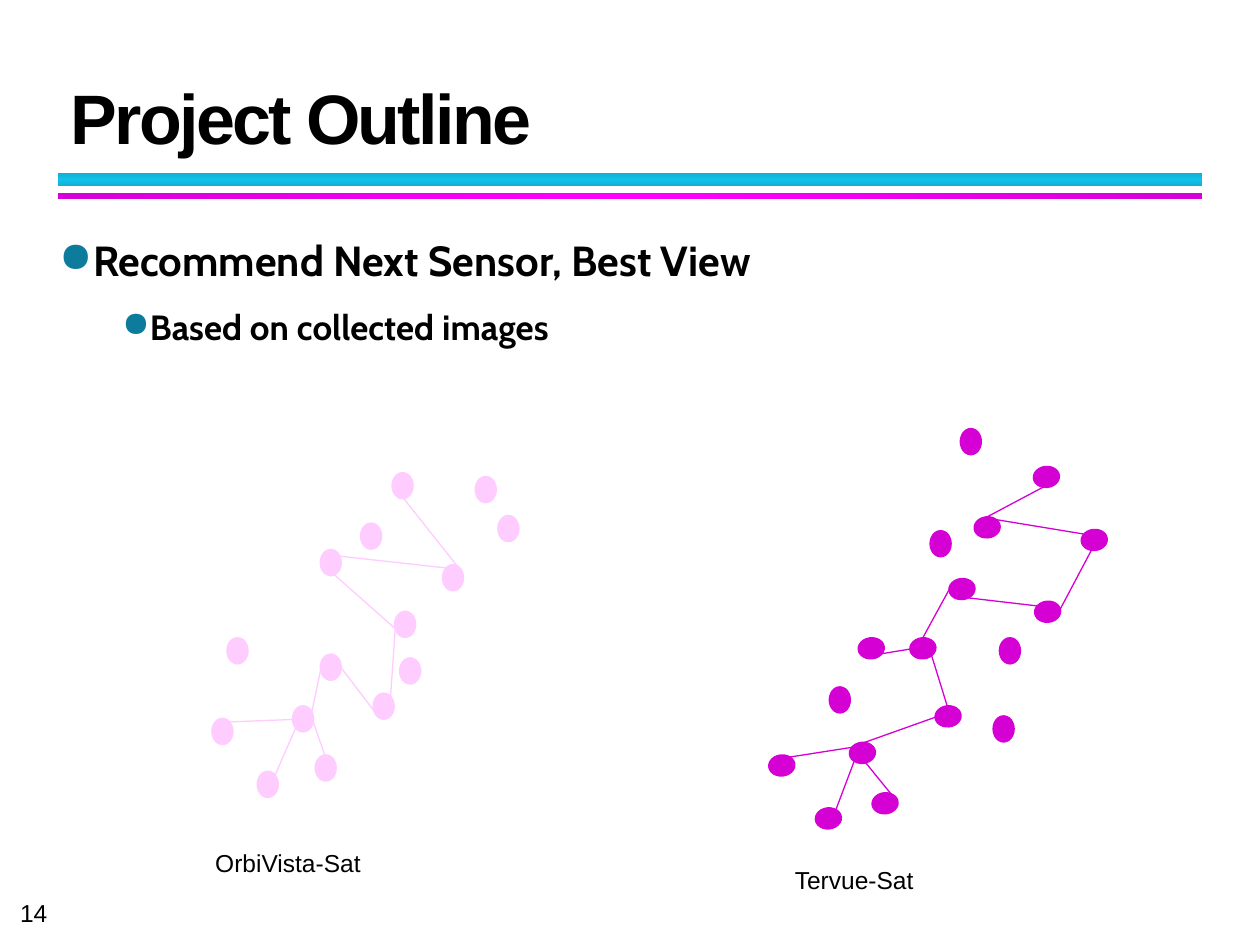
from copy import deepcopy

from lxml import etree
from pptx import Presentation, util as u
from pptx.dml.color import RGBColor
from pptx.enum import shapes, text
from pptx.oxml.ns import qn

COLORS = {
    "text": "000000", "bullet": "0C7B9C",
    "pale": "FFCCFF", "strong": "D400D4",
    "teal": "10AFD2", "cyan": "12C2E9",
    "plum": "D800D8", "magenta": "FF00FF",
}
COLS, ROWS = 100, 75
NODE_W, NODE_H = 1.5, 1.9

PALE_NODES = [
    (25.5, 52), (29.7, 55.1), (31.4, 48.6), (23.3, 56.1), (16.9, 57.1),
    (20.5, 61.3), (25.1, 60), (25.5, 43.7), (35.2, 44.9), (31.2, 37.6),
    (37.8, 37.9), (18.1, 50.7), (31.8, 52.3), (28.7, 41.6), (39.6, 41),
]
PALE_EDGES = [
    (18.1, 57.3, 23.3, 57.1), (21.8, 61.6, 23.5, 57.7), (24.8, 57.1, 25.8, 60),
    (25.5, 52.9, 24.5, 57.7), (29.9, 56.7, 27, 52.9), (31.4, 49.5, 30.9, 56.7),
    (25.5, 44.7, 31.6, 50.1), (36.5, 45.2, 25.7, 44), (31.2, 38.5, 36.5, 45.2),
]
TURNED_NODES = [
    (74.5, 55.9), (68.4, 50.5), (72.5, 50.5), (67.7, 58.8), (61.3, 59.8),
    (65, 64), (69.5, 62.8), (75.6, 45.8), (82.4, 47.6), (77.6, 40.9),
    (86.1, 41.9), (82.3, 36.9),
]
STRONG_NODES = [(76.3, 34.1), (73.9, 42.2), (79.4, 50.7), (65.9, 54.6), (78.9, 56.9)]
STRONG_EDGES = [
    (83.1, 38.5, 78.2, 41.1), (86.1, 42.4, 78.2, 41.1), (83.8, 49, 87.4, 42.2),
    (73.2, 50.7, 75.6, 46.3), (76.4, 47.4, 82.4, 48.1), (72.3, 51.5, 69.9, 51.9),
    (73.9, 51.9, 75.2, 56.1), (68.4, 59, 74.3, 56.9), (67.7, 59.3, 61.3, 60.3),
    (67.8, 60.4, 65.8, 65.7), (67.7, 59.3, 71.2, 63.6),
]


def rgb(name):
    return RGBColor.from_string(COLORS[name])


class Deck:
    def __init__(self):
        self.prs = Presentation()
        self.prs.slide_width, self.prs.slide_height = u.Inches(10), u.Inches(7.5)
        self.s = self.prs.slides.add_slide(self.prs.slide_layouts[5])

    def x(self, cols):
        return round(self.prs.slide_width * cols / COLS)

    def y(self, rows):
        return round(self.prs.slide_height * rows / ROWS)

    def box(self, left, top, width, height):
        return self.x(left), self.y(top), self.x(width), self.y(height)

    def run(self, p, words, size, font="Arial", bold=False):
        r = p.add_run()
        r.text = words
        r.font.size, r.font.name, r.font.bold = u.Pt(size), font, bold
        r.font.color.rgb = rgb("text")
        return r

    def title(self, words, *at):
        sp = self.s.shapes.title
        sp.left, sp.top, sp.width, sp.height = self.box(*at)
        tf = sp.text_frame
        tf.word_wrap, tf.auto_size = True, text.MSO_AUTO_SIZE.NONE
        tf.vertical_anchor = text.MSO_ANCHOR.BOTTOM
        p = tf.paragraphs[0]
        p.alignment, p.line_spacing = text.PP_ALIGN.LEFT, 0.9
        r = self.run(p, words, 40, bold=True)
        r.font._element.set("spc", "-150")

    def textbox(self, *at):
        tf = self.s.shapes.add_textbox(*self.box(*at)).text_frame
        tf.word_wrap = True
        return tf

    def label(self, words, *at):
        self.run(self.textbox(*at).paragraphs[0], words, 14)

    def page_number(self, words, *at):
        tf = self.textbox(*at)
        tf.margin_left = self.x(0.6)
        tf.margin_top = tf.margin_right = tf.margin_bottom = 0
        tf.vertical_anchor = text.MSO_ANCHOR.BOTTOM
        tf.word_wrap = False
        self.run(tf.paragraphs[0], words, 14)

    def bullets(self, items, *at):
        tf = self.textbox(*at)
        for i, (words, level, size, margin, hang) in enumerate(items):
            p = tf.add_paragraph() if i else tf.paragraphs[0]
            p.level, p.line_spacing = level, 1.5
            pPr = p._p.get_or_add_pPr()
            pPr.set("marL", str(self.x(margin)))
            pPr.set("indent", str(-self.x(hang)))
            color = etree.SubElement(pPr, qn("a:buClr"))
            etree.SubElement(color, qn("a:srgbClr"), val=COLORS["bullet"])
            etree.SubElement(pPr, qn("a:buChar"), char="●")
            self.run(p, words, size, "Cabin", True)

    def shape(self, kind, *at):
        sp = self.s.shapes.add_shape(kind, *self.box(*at))
        sp.shadow.inherit = False
        return sp

    def band(self, edge, middle, angle, *at):
        sp = self.shape(shapes.MSO_SHAPE.RECTANGLE, *at)
        sp.line.fill.background()
        sp.fill.gradient()
        sp.fill.gradient_angle = angle
        stop_list = sp._element.spPr.find(qn("a:gradFill")).find(qn("a:gsLst"))
        stop_list.append(deepcopy(stop_list[0]))
        for stop, place, color in zip(sp.fill.gradient_stops, (0, 0.5, 1), (edge, middle, edge)):
            stop.position, stop.color.rgb = place, rgb(color)

    def node(self, left, top, color, turn=0):
        sp = self.shape(shapes.MSO_SHAPE.OVAL, left, top, NODE_W, NODE_H)
        sp.rotation = turn
        sp.fill.solid()
        sp.fill.fore_color.rgb = sp.line.color.rgb = rgb(color)
        sp.line.width = u.Pt(2)

    def edge(self, x1, y1, x2, y2, color):
        line = self.s.shapes.add_connector(
            shapes.MSO_CONNECTOR.STRAIGHT, self.x(x1), self.y(y1), self.x(x2), self.y(y2))
        line.line.color.rgb, line.line.width = rgb(color), u.Pt(0.75)
        etree.SubElement(line._element.spPr, qn("a:effectLst"))

    def network(self, color, nodes, edges, turned=()):
        for node in nodes:
            self.node(*node, color)
        for node in turned:
            self.node(*node, color, 264)
        for edge in edges:
            self.edge(*edge, color)


def main():
    deck = Deck()
    deck.page_number("14", 1, 71.3, 3.4, 2.3)
    deck.band("teal", "cyan", 90, 4.6, 13.7, 90.8, 1.1)
    deck.band("plum", "magenta", 0, 4.6, 15.3, 90.8, 0.5)
    deck.title("Project Outline", 4.6, 3.3, 90.6, 9.9)
    deck.bullets([
        ("Recommend Next Sensor, Best View", 0, 24, 2.7, 2.7),
        ("Based on collected images", 1, 20, 6.9, 1.9),
    ], 3.7, 16.1, 90.1, 50.4)
    deck.network("pale", PALE_NODES, PALE_EDGES)
    deck.label("OrbiVista-Sat", 16.1, 66.8, 22.4, 3.4)
    deck.network("strong", STRONG_NODES, STRONG_EDGES, TURNED_NODES)
    deck.label("Tervue-Sat", 62.1, 68.2, 22.4, 3.4)
    deck.prs.save("out.pptx")


if __name__ == "__main__":
    main()
